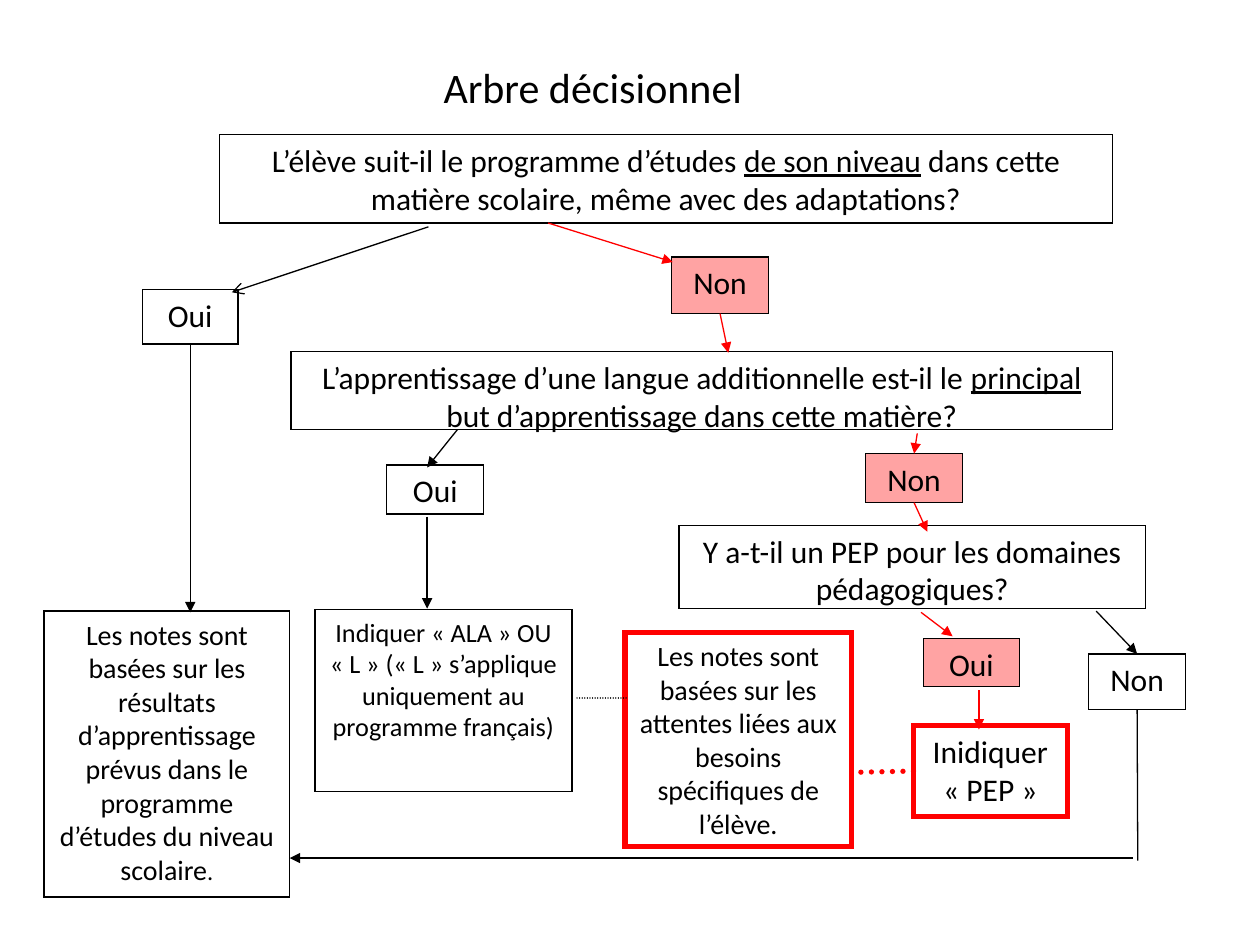
from lxml.etree import SubElement
from pptx import Presentation
from pptx.dml.color import RGBColor
from pptx.enum.dml import MSO_LINE_DASH_STYLE as Dash
from pptx.enum.shapes import MSO_CONNECTOR, MSO_SHAPE
from pptx.enum.text import MSO_ANCHOR, MSO_AUTO_SIZE, PP_ALIGN
from pptx.oxml.ns import qn
from pptx.util import Pt

PX = 9144  # EMU per px, 100 px to the inch
FONT = "Calibri"
BLACK, WHITE, RED = "000000", "FFFFFF", "FF0000"
TOP, LEFT, BOTTOM = 0, 1, 2

TITLE = ("Arbre décisionnel", (342, 44, 344, 51))

# Box looks: fill, opacity in percent, line colour, line width
PLAIN = (WHITE, 100, BLACK, 0.75)
TINTED = (RED, 36, BLACK, 0.75)
FRAMED = (WHITE, 100, RED, 3)

# key: (left, top, width, height), look, runs of (text, size, underlined)
BOXES = {
    "grade level?": ((174, 107, 709, 70), PLAIN, [
        ("L’élève suit-il le programme d’études ", 18, False),
        ("de son niveau", 18, True),
        (" dans cette matière scolaire, même avec des adaptations?", 18, False)]),
    "grade level: yes": ((113, 230, 76, 43), PLAIN, [("Oui", 18, False)]),
    "grade level: no": ((533, 204, 77, 45), TINTED, [("Non", 18, False)]),
    "language?": ((231, 279, 652, 62), PLAIN, [
        ("L’apprentissage d’une langue additionnelle est-il le ", 18, False),
        ("principal", 18, True),
        (" but d’apprentissage dans cette matière?", 18, False)]),
    "language: yes": ((307, 369, 77, 39), PLAIN, [("Oui", 18, False)]),
    "language: no": ((687, 360, 77, 39), TINTED, [("Non", 18, False)]),
    "plan?": ((539, 417, 370, 66), PLAIN, [
        ("Y a-t-il un PEP pour les domaines pédagogiques?", 18, False)]),
    "plan: yes": ((733, 507, 76, 38), TINTED, [("Oui", 18, False)]),
    "plan: no": ((864, 519, 77, 44), PLAIN, [("Non", 18, False)]),
    "standard marks": ((35, 485, 195, 227), PLAIN, [
        ("Les notes sont basées sur les résultats d’apprentissage prévus dans "
         "le programme d’études du niveau scolaire", 16, False),
        (".", 14, False)]),
    "write ALA": ((250, 484, 204, 144), PLAIN, [
        ("Indiquer « ALA » OU « L » (« L » s’applique uniquement au "
         "programme français)", 15, False)]),
    "adapted marks": ((496, 502, 180, 170), FRAMED, [
        ("Les notes sont basées sur les attentes liées aux besoins "
         "spécifiques de l’élève.", 16, False)]),
    "write PEP": ((725, 576, 122, 72), FRAMED, [
        ("Inidiquer « PEP »", 18, False)]),
}

# Each end is a point, or (box key, side) where it joins a side's middle
# from, to, colour, width, arrowhead, dotted
LINKS = [
    ((340, 180), (184, 232), BLACK, 0.75, "arrow", False),
    ((435, 177), (534, 208), RED, 0.75, "triangle", False),
    (("grade level: yes", BOTTOM), (151, 486), BLACK, 0.75, "triangle", False),
    (("grade level: no", BOTTOM), (578, 280), RED, 0.75, "triangle", False),
    ((363, 341), (339, 371), BLACK, 0.75, "triangle", False),
    ((728, 344), ("language: no", TOP), RED, 0.75, "triangle", False),
    ((339, 410), (339, 483), BLACK, 0.75, "triangle", False),
    (("language: no", BOTTOM), (736, 422), RED, 0.75, "triangle", False),
    ((731, 486), (756, 505), RED, 0.75, "triangle", False),
    ((870, 485), ("plan: no", TOP), BLACK, 0.75, "triangle", False),
    ((777, 548), (777, 579), RED, 0.75, "triangle", False),
    (("plan: no", BOTTOM), (903, 683), BLACK, 0.75, None, False),
    ((899, 681), (230, 681), BLACK, 0.75, "triangle", False),
    ((458, 554), (498, 554), BLACK, 0.75, None, True),
    (("write PEP", LEFT), (676, 613), RED, 3, None, True),
]


def rgb(hex_text):
    return RGBColor.from_string(hex_text)


def emu(lengths):
    return [n * PX for n in lengths]


def add_run(p, text, size, underlined=False):
    r = p.add_run()
    r.text = text
    look = {"name": FONT, "size": Pt(size), "underline": underlined or None}
    for key, value in look.items():
        setattr(r.font, key, value)
    r.font.color.rgb = rgb(BLACK)


def add_title(slide, text, place):
    sp = slide.shapes.title
    sp.left, sp.top, sp.width, sp.height = emu(place)
    tf = sp.text_frame
    look = {"word_wrap": True, "vertical_anchor": MSO_ANCHOR.TOP,
            "auto_size": MSO_AUTO_SIZE.NONE}
    for key, value in look.items():
        setattr(tf, key, value)
    p = tf.paragraphs[0]
    p.alignment = PP_ALIGN.LEFT
    add_run(p, text, 24)


def add_box(slide, place, look, runs):
    fill, opacity, line, width = look
    sp = slide.shapes.add_shape(MSO_SHAPE.RECTANGLE, *emu(place))
    sp.shadow.inherit = False
    sp.fill.solid()
    sp.fill.fore_color.rgb = rgb(fill)
    if opacity < 100:
        color = sp.fill._xPr.find(qn("a:solidFill"))[0]
        SubElement(color, qn("a:alpha"), val=str(opacity * 1000))
    sp.line.color.rgb = rgb(line)
    sp.line.width = Pt(width)
    SubElement(sp.line._get_or_add_ln(), qn("a:miter"), lim="800000")
    tf = sp.text_frame
    tf.word_wrap = True
    tf.vertical_anchor = MSO_ANCHOR.TOP
    p = tf.paragraphs[0]
    p.alignment = PP_ALIGN.CENTER
    p.space_after = Pt(10)
    for run in runs:
        add_run(p, *run)
    return sp


def add_link(slide, boxes, start, end, color, width, head, dotted):
    stops = (start, end)
    joined = [stop[0] in boxes for stop in stops]
    points = [(0, 0) if join else stop for join, stop in zip(joined, stops)]
    cxn = slide.shapes.add_connector(
        MSO_CONNECTOR.STRAIGHT, *emu(points[0] + points[1]))
    connect = (cxn.begin_connect, cxn.end_connect)
    for join, stop, attach in zip(joined, stops, connect):
        if join:
            attach(boxes[stop[0]], stop[1])
    cxn.line.color.rgb = rgb(color)
    cxn.line.width = Pt(width)
    ln = cxn.line._get_or_add_ln()
    if dotted:
        cxn.line.dash_style = Dash.ROUND_DOT
        ln.set("cap", "rnd")
    if head:
        SubElement(ln, qn("a:tailEnd"), type=head)
    SubElement(cxn._element.spPr, qn("a:effectLst"))


def main():
    prs = Presentation()
    prs.slide_width, prs.slide_height = emu((1000, 750))
    slide = prs.slides.add_slide(prs.slide_layouts[5])
    add_title(slide, *TITLE)
    boxes = {key: add_box(slide, *box) for key, box in BOXES.items()}
    for link in LINKS:
        add_link(slide, boxes, *link)
    prs.save("out.pptx")


if __name__ == "__main__":
    main()
